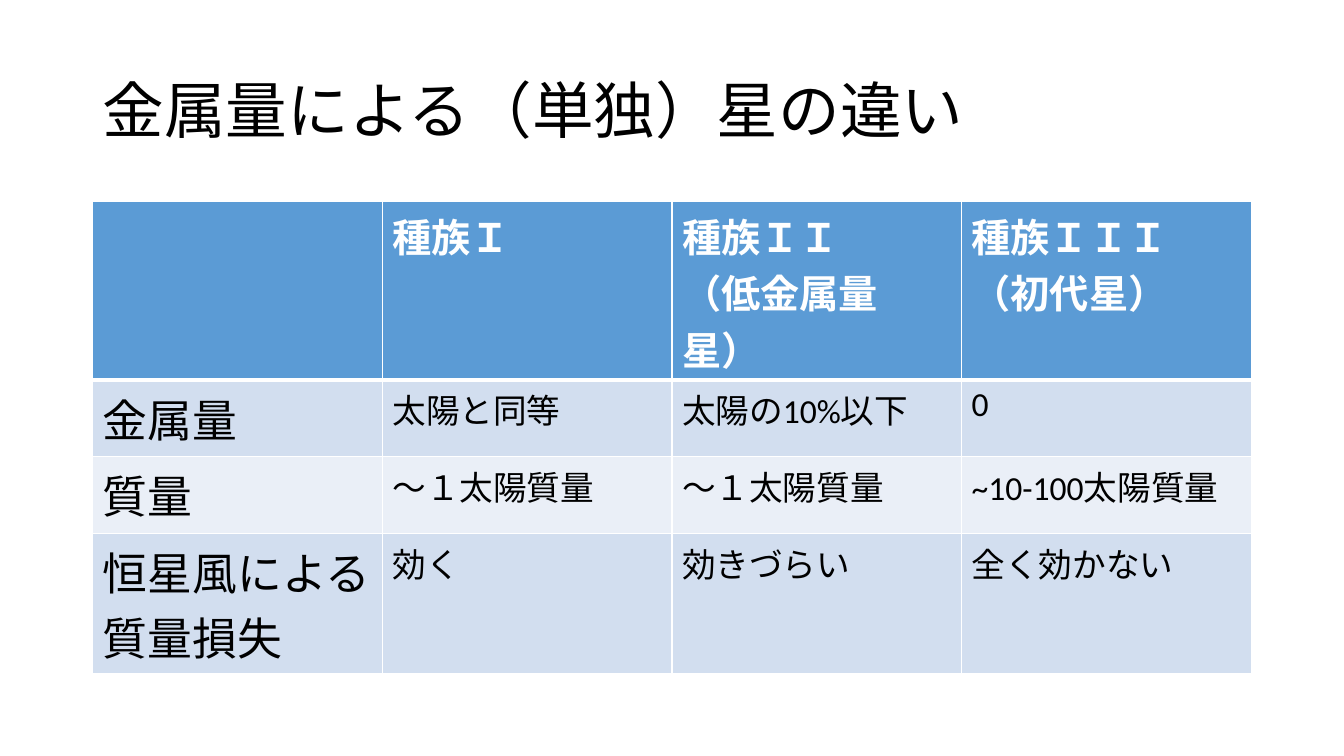
from dataclasses import dataclass

import lxml.etree
import pptx
import pptx.dml.color
import pptx.enum.lang
import pptx.enum.text
import pptx.oxml.ns
import pptx.util

Inches = pptx.util.Inches
qn = pptx.oxml.ns.qn


@dataclass(frozen=True)
class Theme:
    font: str = "Calibri"
    ink: str = "000000"
    paper: str = "FFFFFF"
    header_fill: str = "5B9BD5"
    bands: tuple[str, str] = ("D2DEEF", "EAEFF7")
    title_size: int = 44
    header_size: int = 28
    label_size: int = 32
    body_size: int = 24
    thin: int = 1
    thick: int = 3


@dataclass(frozen=True)
class TextStyle:
    size: int
    color: str
    bold: bool = False


@dataclass(frozen=True)
class Row:
    height: float
    cells: tuple[str, ...]


THEME = Theme()
TITLE = "金属量による（単独）星の違い"
LEFT, WIDTH = 0.92, 11.49
ROWS = (
    Row(1.77, ("", "種族Ｉ", "種族ＩＩ\n（低金属量星）", "種族ＩＩＩ\n（初代星）")),
    Row(0.76, ("金属量", "太陽と同等", "太陽の10%以下", "0")),
    Row(0.76, ("質量", "～１太陽質量", "～１太陽質量", "~10-100太陽質量")),
    Row(1.39, ("恒星風による質量損失", "効く", "効きづらい", "全く効かない")),
)


def rgb(color: str) -> pptx.dml.color.RGBColor:
    return pptx.dml.color.RGBColor.from_string(color)


def write_text(tf, text: str, style: TextStyle) -> None:
    tf.text = text
    font_format = {
        "name": THEME.font,
        "size": pptx.util.Pt(style.size),
        "bold": style.bold,
        "language_id": pptx.enum.lang.MSO_LANGUAGE_ID.JAPANESE,
    }
    for p in tf.paragraphs:
        for r in p.runs:
            for key, value in font_format.items():
                setattr(r.font, key, value)
            r.font.color.rgb = rgb(style.color)


def draw_borders(cell, widths: dict[str, int]) -> None:
    tc_pr = cell._tc.get_or_add_tcPr()
    for side, width in widths.items():
        ln = lxml.etree.SubElement(tc_pr, qn(f"a:ln{side}"), w=str(pptx.util.Pt(width)))
        fill = lxml.etree.SubElement(ln, qn("a:solidFill"))
        lxml.etree.SubElement(fill, qn("a:srgbClr"), val=THEME.paper)


def cell_style(row: int, col: int) -> TextStyle:
    if row == 0:
        return TextStyle(THEME.header_size, THEME.paper, True)
    return TextStyle(THEME.body_size if col else THEME.label_size, THEME.ink)


def draw_title(s) -> None:
    tf = s.shapes.add_textbox(Inches(LEFT), Inches(0.4), Inches(WIDTH), Inches(1.45)).text_frame
    frame_format = {
        "word_wrap": True,
        "vertical_anchor": pptx.enum.text.MSO_ANCHOR.MIDDLE,
    }
    for key, value in frame_format.items():
        setattr(tf, key, value)
    write_text(tf, TITLE, TextStyle(THEME.title_size, THEME.ink))
    tf.paragraphs[0].line_spacing = 0.9


def draw_table(s) -> None:
    height = sum(row.height for row in ROWS)
    table = s.shapes.add_table(
        len(ROWS), len(ROWS[0].cells), Inches(LEFT), Inches(2), Inches(WIDTH), Inches(height)
    ).table
    for i, row in enumerate(ROWS):
        table.rows[i].height = Inches(row.height)
        color = THEME.bands[(i - 1) % 2] if i else THEME.header_fill
        widths = {
            "L": THEME.thin,
            "R": THEME.thin,
            "T": THEME.thick if i == 1 else THEME.thin,
            "B": THEME.thick if i == 0 else THEME.thin,
        }
        for j, text in enumerate(row.cells):
            cell = table.cell(i, j)
            write_text(cell.text_frame, text, cell_style(i, j))
            draw_borders(cell, widths)
            cell.fill.solid()
            cell.fill.fore_color.rgb = rgb(color)


def main() -> None:
    prs = pptx.Presentation()
    prs.slide_width, prs.slide_height = Inches(13.33), Inches(7.5)
    s = prs.slides.add_slide(prs.slide_layouts[6])
    draw_title(s)
    draw_table(s)
    prs.save("out.pptx")


if __name__ == "__main__":
    main()
